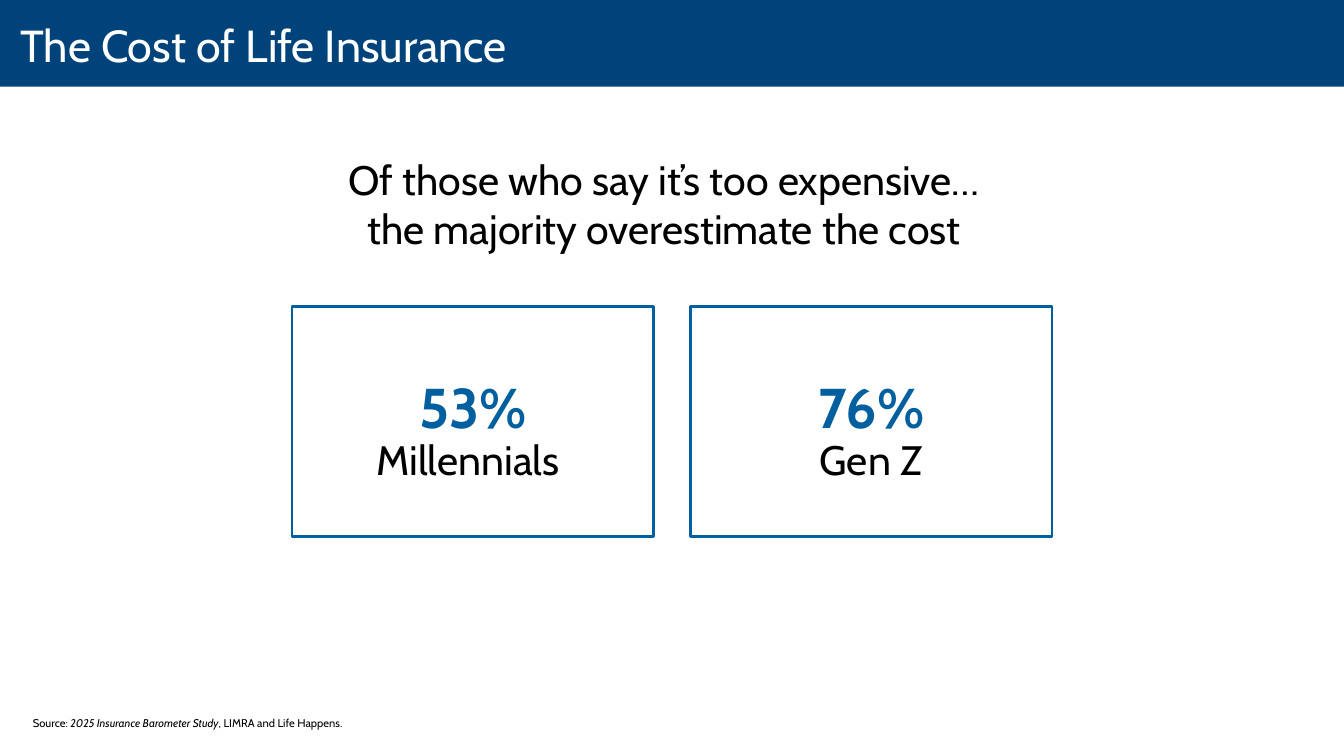
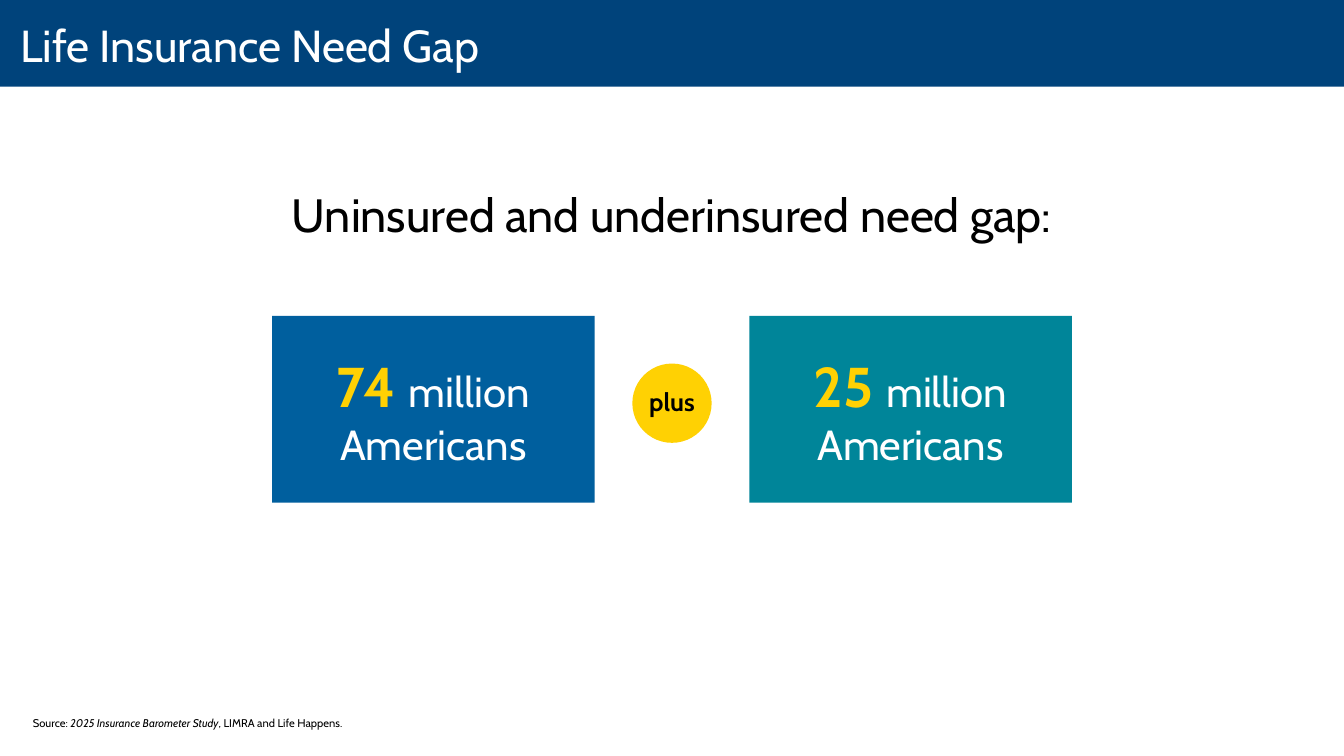
"""Build two slides on the cost of life insurance and the need gap."""
from pptx import Presentation
from pptx.dml.color import RGBColor
from pptx.enum.shapes import MSO_SHAPE as Shape
from pptx.enum.text import MSO_ANCHOR as Anchor, PP_ALIGN as Align
from pptx.util import Inches, Pt

NAVY = RGBColor(0x00, 0x43, 0x7B)
BLUE = RGBColor(0x00, 0x5F, 0x9E)
TEAL = RGBColor(0x00, 0x85, 0x99)
YELLOW = RGBColor(0xFF, 0xD1, 0x03)
BLACK = RGBColor(0x00, 0x00, 0x00)
WHITE = RGBColor(0xFF, 0xFF, 0xFF)
FONT = "Cabin"

presentation = Presentation()
presentation.slide_width, presentation.slide_height = Inches(20), Inches(11.25)
COLUMNS = 20
UNIT = presentation.slide_width // COLUMNS


def add_shape(slide, kind, area, fill=None, line=None):
    """Add a preset shape at a grid area of left, top, width and height."""
    shape = slide.shapes.add_shape(kind, *(int(UNIT * length) for length in area))
    shape.shadow.inherit = False
    if fill is None:
        shape.fill.background()
    else:
        shape.fill.solid()
        shape.fill.fore_color.rgb = fill
    if line is None:
        shape.line.fill.background()
    else:
        shape.line.color.rgb = line
        shape.line.width = Pt(3)
    return shape


def add_text(slide, area, lines, align=Align.CENTER, anchor=Anchor.TOP, margins=(0.1, 0.05, 0.1, 0.05), shape=None):
    """Write lines of (text, size, color, format) runs in a shape or a new text box."""
    if shape is None:
        shape = slide.shapes.add_textbox(*(int(UNIT * length) for length in area))
    frame = shape.text_frame
    frame.word_wrap = True
    frame.vertical_anchor = anchor
    for side, margin in zip(("left", "top", "right", "bottom"), margins):
        setattr(frame, f"margin_{side}", int(UNIT * margin))
    for index, runs in enumerate(lines):
        paragraph = frame.add_paragraph() if index else frame.paragraphs[0]
        paragraph.alignment = align
        for text, size, color, extra in runs:
            run = paragraph.add_run()
            run.text = text
            run.font.color.rgb = color
            for name, value in {"name": FONT, "size": Pt(size), **extra}.items():
                setattr(run.font, name, value)


BOLD = {"bold": True}
ITALIC = {"italic": True}
SOURCE = [
    ("Source: ", 12, BLACK, {}),
    ("2025 Insurance Barometer Study", 12, BLACK, ITALIC),
    (", LIMRA and Life Happens.", 12, BLACK, {}),
]

headings = [
    ("The Cost of Life Insurance", 44, (1.46, 2.25, 16.85, 1.58),
     ["Of those who say it’s too expensive…", "the majority overestimate the cost"]),
    ("Life Insurance Need Gap", 50, (2.48, 2.72, 15.04, 0.94),
     ["Uninsured and underinsured need gap:"]),
]
slides = []
for title, size, area, lines in headings:
    slide = presentation.slides.add_slide(presentation.slide_layouts[6])
    add_shape(slide, Shape.RECTANGLE, (0, 0, COLUMNS, 1.29), fill=NAVY)
    add_text(slide, (0, -0.07, COLUMNS, 1.46), [[(title, 48, WHITE, {})]],
             Align.LEFT, Anchor.MIDDLE, (0.3, 0, 0.2, 0))
    add_text(slide, area, [[(line, size, BLACK, {})] for line in lines])
    add_text(slide, (0.39, 10.61, 13.67, 0.3), [SOURCE], Align.LEFT)
    slides.append(slide)
cost_slide, gap_slide = slides

CARD_WIDTH, CARD_GAP = 5.38, 0.55
cards_left = (COLUMNS - 2 * CARD_WIDTH - CARD_GAP) / 2
for index, (share, generation) in enumerate([("53%", "Millennials "), ("76%", "Gen Z")]):
    left = cards_left + index * (CARD_WIDTH + CARD_GAP)
    add_shape(cost_slide, Shape.RECTANGLE, (left, 4.56, CARD_WIDTH, 3.43), line=BLUE)
    add_text(cost_slide, (left, 5.62, CARD_WIDTH, 0.86), [[(share, 60, BLUE, BOLD)]],
             anchor=Anchor.MIDDLE)
    add_text(cost_slide, (left, 6.5, CARD_WIDTH, 0.65), [[(generation, 44, BLACK, {})]],
             anchor=Anchor.MIDDLE)

CIRCLE = 1.18
circle_left = (COLUMNS - CIRCLE) / 2
add_shape(gap_slide, Shape.OVAL, (circle_left, 5.41, CIRCLE, CIRCLE), fill=YELLOW)
add_text(gap_slide, (circle_left, 5.7, CIRCLE, 0.56), [[("plus", 27, BLACK, BOLD)]])

BLOCK_WIDTH, BLOCK_GAP = 4.8, 2.3
blocks_left = (COLUMNS - 2 * BLOCK_WIDTH - BLOCK_GAP) / 2
for index, (count, color) in enumerate([("74 ", BLUE), ("25 ", TEAL)]):
    area = (blocks_left + index * (BLOCK_WIDTH + BLOCK_GAP), 4.7, BLOCK_WIDTH, 2.78)
    block = add_shape(gap_slide, Shape.RECTANGLE, area, fill=color)
    add_text(gap_slide, area, [[(count, 60, YELLOW, BOLD), ("million Americans", 45, WHITE, {})]],
             anchor=Anchor.BOTTOM, margins=(0.6, 0.5, 0.6, 0.5), shape=block)

presentation.save("out.pptx")
